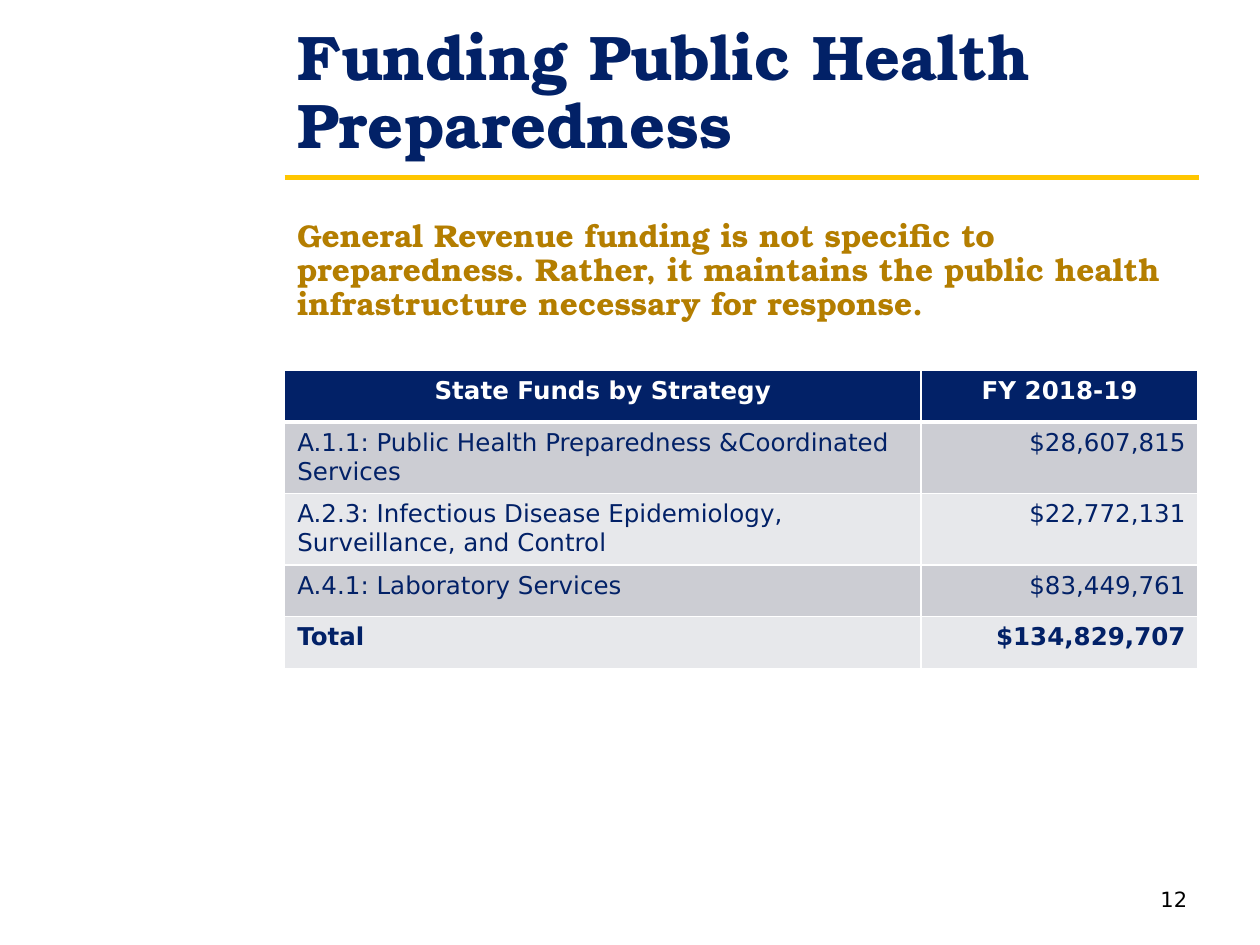
from lxml import etree
from pptx import Presentation
from pptx.dml.color import RGBColor
from pptx.enum import shapes, text
from pptx.oxml.ns import qn
from pptx.util import Inches, Pt

NAVY, GOLD, YELLOW, WHITE = "022167", "B47E00", "FFC600", "FFFFFF"
BANDS = ("CCCDD3", "E7E8EB")
SERIF, SANS = "TeX Gyre Bonum", "DejaVu Sans"
LEFT, WIDTH = 2.26, 7.25
ALIGN, ANCHOR = text.PP_ALIGN, text.MSO_ANCHOR


def rgb(value):
    return RGBColor.from_string(value)


def write(tf, content, font=SANS, size=14, color=NAVY, bold=False,
          align=ALIGN.LEFT, spacing=None):
    p = tf.paragraphs[0]
    p.alignment = align
    if spacing:
        p.line_spacing = spacing
    r = p.add_run()
    r.text = content
    r.font.name, r.font.size, r.font.bold = font, Pt(size), bold
    r.font.color.rgb = rgb(color)


def set_borders(cell, bottom=1):
    """Draw white edges; they must precede the cell's fill in the XML."""
    tc_pr = cell._tc.get_or_add_tcPr()
    for i, (side, width) in enumerate(
            (("lnL", 1), ("lnR", 1), ("lnT", 1), ("lnB", bottom))):
        ln = etree.Element(qn(f"a:{side}"), w=str(Pt(width)))
        fill = etree.SubElement(ln, qn("a:solidFill"))
        etree.SubElement(fill, qn("a:srgbClr"), val=WHITE)
        tc_pr.insert(i, ln)


class SlideBuilder:
    def __init__(self, s):
        self.s = s

    def text_box(self, x, y, w, h, content, anchor=ANCHOR.TOP, **style):
        sp = self.s.shapes.add_textbox(Inches(x), Inches(y), Inches(w), Inches(h))
        tf = sp.text_frame
        tf.word_wrap = True
        tf.vertical_anchor = anchor
        write(tf, content, **style)

    def rule(self, x, y, w, color, width):
        line = self.s.shapes.add_connector(
            shapes.MSO_CONNECTOR.STRAIGHT, Inches(x), Inches(y), Inches(x + w), Inches(y))
        line.line.color.rgb = rgb(color)
        line.line.width = Pt(width)
        etree.SubElement(line._element.spPr, qn("a:effectLst"))

    def table(self, x, y, col_widths, row_height, rows):
        """Header row, banded body rows and a bold total row."""
        tbl = self.s.shapes.add_table(
            len(rows), len(col_widths), Inches(x), Inches(y),
            Inches(sum(col_widths)), Inches(row_height * len(rows))).table
        for col, width in zip(tbl.columns, col_widths):
            col.width = Inches(width)
        for i, values in enumerate(rows):
            tbl.rows[i].height = Inches(row_height)
            header, total = i == 0, i == len(rows) - 1
            for j, value in enumerate(values):
                cell = tbl.cell(i, j)
                cell.fill.solid()
                cell.fill.fore_color.rgb = rgb(NAVY if header else BANDS[(i - 1) % 2])
                set_borders(cell, bottom=3 if header else 1)
                body_align = ALIGN.RIGHT if j else ALIGN.LEFT
                write(cell.text_frame, value, bold=header or total,
                      color=WHITE if header else NAVY,
                      align=ALIGN.CENTER if header else body_align)


def main():
    prs = Presentation()
    prs.slide_width, prs.slide_height = Inches(10), Inches(7.5)
    slide = SlideBuilder(prs.slides.add_slide(prs.slide_layouts[6]))

    slide.rule(LEFT, 1.41, 7.26, YELLOW, 3)
    slide.text_box(LEFT, 0.47, WIDTH, 0.87, "Funding Public Health Preparedness",
                   anchor=ANCHOR.BOTTOM, font=SERIF, size=36, bold=True, spacing=0.9)
    slide.text_box(LEFT, 1.7, WIDTH, 0.89,
                   "General Revenue funding is not specific to preparedness. Rather, "
                   "it maintains the public health infrastructure necessary for response.",
                   font=SERIF, size=18, color=GOLD, bold=True, spacing=0.9)
    slide.table(LEFT, 2.94, (5.05, 2.2), 0.41, (
        ("State Funds by Strategy", "FY 2018-19"),
        ("A.1.1: Public Health Preparedness &Coordinated Services", "$28,607,815"),
        ("A.2.3: Infectious Disease Epidemiology, Surveillance, and Control", "$22,772,131"),
        ("A.4.1: Laboratory Services", "$83,449,761"),
        ("Total", "$134,829,707"),
    ))
    slide.text_box(8.4, 6.94, 1.12, 0.4, "12", anchor=ANCHOR.MIDDLE,
                   size=12, color="000000", align=ALIGN.RIGHT)
    prs.save("out.pptx")


if __name__ == "__main__":
    main()
